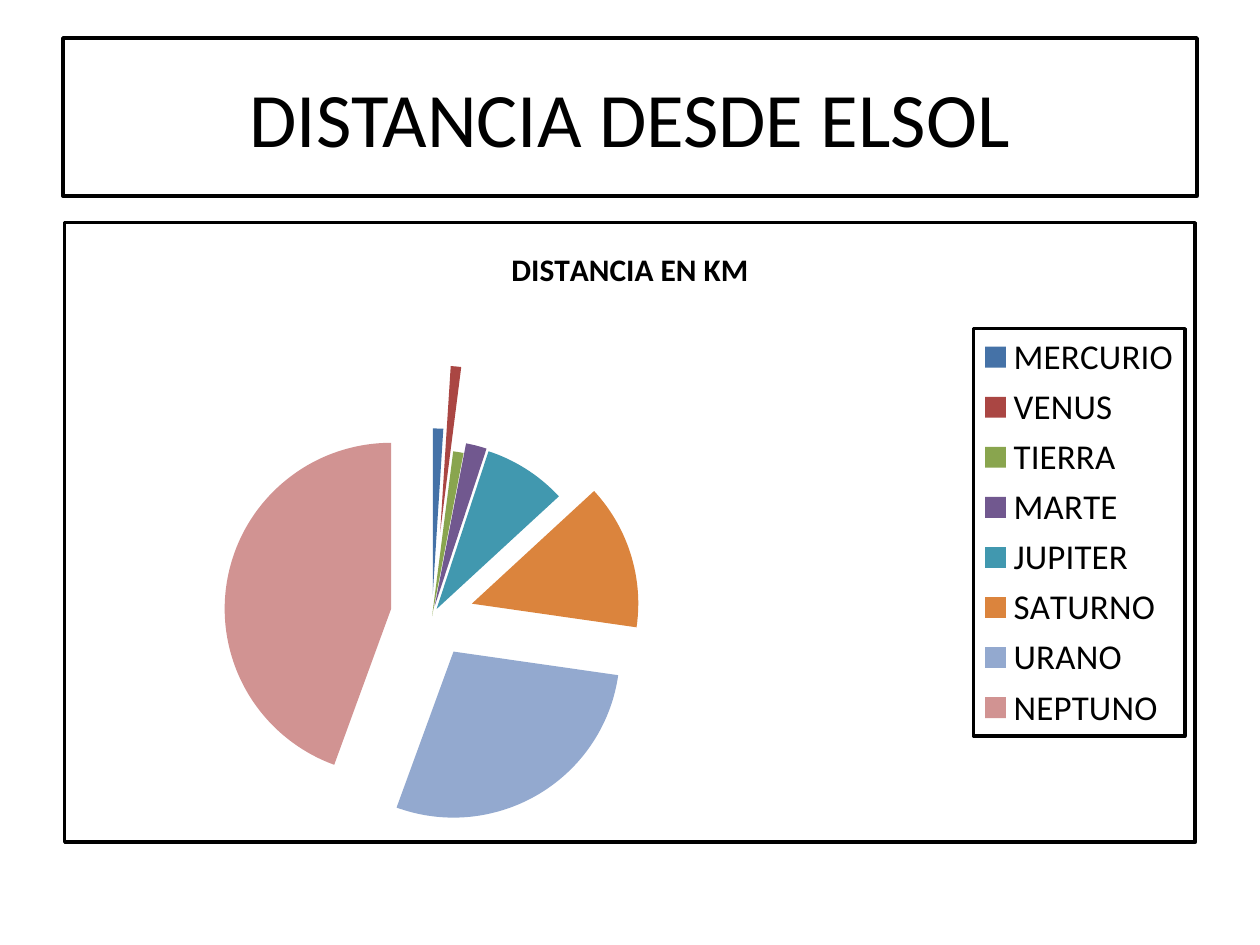
"""Build a slide with an exploded pie chart of planet distances from the Sun."""
import pptx
import pptx.chart.data
import pptx.dml.color
import pptx.enum.chart
import pptx.enum.text
import pptx.oxml
import pptx.oxml.ns
import pptx.util

TITLE = "DISTANCIA DESDE ELSOL"
CHART_TITLE = "DISTANCIA EN KM"
PLANETS = [
    ("MERCURIO", 1, "mercury", 13),
    ("VENUS", 1, "venus", 51),
    ("TIERRA ", 1, "earth", 0),
    ("MARTE", 2, "mars", 6),
    ("JUPITER", 8, "jupiter", 5),
    ("SATURNO", 14, "saturn", 25),
    ("URANO", 28, "uranus", 25),
    ("NEPTUNO", 44, "neptune", 25),
]
COLORS = {
    "ink": "000000", "paper": "FFFFFF",
    "mercury": "4572A7", "venus": "AA4643", "earth": "89A54E", "mars": "71588F",
    "jupiter": "4198AF", "saturn": "DB843D", "uranus": "93A9CF", "neptune": "D19392",
}
FONTS = {
    "title": {"size": 44, "bold": False},
    "chart": {"size": 10, "bold": False},
    "heading": {"size": 18, "bold": True},
    "legend": {"size": 20, "bold": False},
}
TITLE_BOX = (63, 38, 1134, 158)
CHART_BOX = (63, 221, 1134, 623)
PLOT = {"x": 0.02, "y": 0.3, "w": 0.61, "h": 0.67}
EXPLOSION = 25
PX = 914400 / 126


def emu(box):
    return [pptx.util.Emu(round(v * PX)) for v in box]


def rgb(name):
    return pptx.dml.color.RGBColor.from_string(COLORS[name])


def set_font(font, role):
    values = FONTS[role] | {"name": "Calibri", "size": pptx.util.Pt(FONTS[role]["size"])}
    for key, value in values.items():
        setattr(font, key, value)
    font.color.rgb = rgb("ink")


def c_xml(text):
    return pptx.oxml.parse_xml(text.replace(" ", f" {pptx.oxml.ns.nsdecls('c', 'a')} ", 1))


def frame_xml():
    return c_xml(
        f'<c:spPr ><a:solidFill><a:srgbClr val="{COLORS["paper"]}"/></a:solidFill>'
        f'<a:ln w="{pptx.util.Pt(2)}"><a:solidFill><a:srgbClr val="{COLORS["ink"]}"/>'
        '</a:solidFill></a:ln></c:spPr>')


def add_title(slide):
    sp = slide.shapes.title
    sp.left, sp.top, sp.width, sp.height = emu(TITLE_BOX)
    sp.fill.solid()
    sp.fill.fore_color.rgb = rgb("paper")
    sp.line.color.rgb = rgb("ink")
    sp.line.width = pptx.util.Pt(2)
    tf = sp.text_frame
    tf.text = TITLE
    tf.vertical_anchor = pptx.enum.text.MSO_ANCHOR.MIDDLE
    p = tf.paragraphs[0]
    p.alignment = pptx.enum.text.PP_ALIGN.CENTER
    set_font(p.runs[0].font, "title")


def style_slices(series):
    for i, (_, _, color, explosion) in enumerate(PLANETS):
        fill = series.points[i].format.fill
        fill.solid()
        fill.fore_color.rgb = rgb(color)
        point = series._element.findall(pptx.oxml.ns.qn("c:dPt"))[i]
        point.find(pptx.oxml.ns.qn("c:spPr")).addprevious(
            c_xml(f'<c:explosion val="{explosion}"/>'))
    first = series._element.find(pptx.oxml.ns.qn("c:dPt"))
    first.addprevious(c_xml(f'<c:explosion val="{EXPLOSION}"/>'))


def add_pie(slide):
    data = pptx.chart.data.CategoryChartData()
    data.categories = [planet[0] for planet in PLANETS]
    data.add_series(CHART_TITLE, [planet[1] for planet in PLANETS])
    chart = slide.shapes.add_chart(
        pptx.enum.chart.XL_CHART_TYPE.PIE, *emu(CHART_BOX), data).chart
    set_font(chart.font, "chart")
    chart.has_title = True
    chart.chart_title.text_frame.text = CHART_TITLE
    set_font(chart.chart_title.text_frame.paragraphs[0].runs[0].font, "heading")
    chart.has_legend = True
    legend = chart.legend
    legend.position = pptx.enum.chart.XL_LEGEND_POSITION.RIGHT
    legend.include_in_layout = False
    set_font(legend.font, "legend")
    plot = chart.plots[0]
    plot.vary_by_categories = True
    style_slices(plot.series[0])

    modes = "".join(f'<c:{k}Mode val="edge"/>' for k in "xy")
    sizes = "".join(f'<c:{k} val="{v}"/>' for k, v in PLOT.items())
    area = chart._chartSpace.chart.plotArea
    for old in area.findall(pptx.oxml.ns.qn("c:layout")):
        area.remove(old)
    area.insert(0, c_xml('<c:layout ><c:manualLayout><c:layoutTarget val="inner"/>'
                         f'{modes}{sizes}</c:manualLayout></c:layout>'))
    text = pptx.oxml.ns.qn("c:txPr")
    for element in (legend._element, chart._chartSpace):
        element.find(text).addprevious(frame_xml())


def main():
    prs = pptx.Presentation()
    prs.slide_width, prs.slide_height = emu((1260, 945))
    slide = prs.slides.add_slide(prs.slide_layouts[5])
    add_title(slide)
    add_pie(slide)
    prs.save("out.pptx")


if __name__ == "__main__":
    main()
